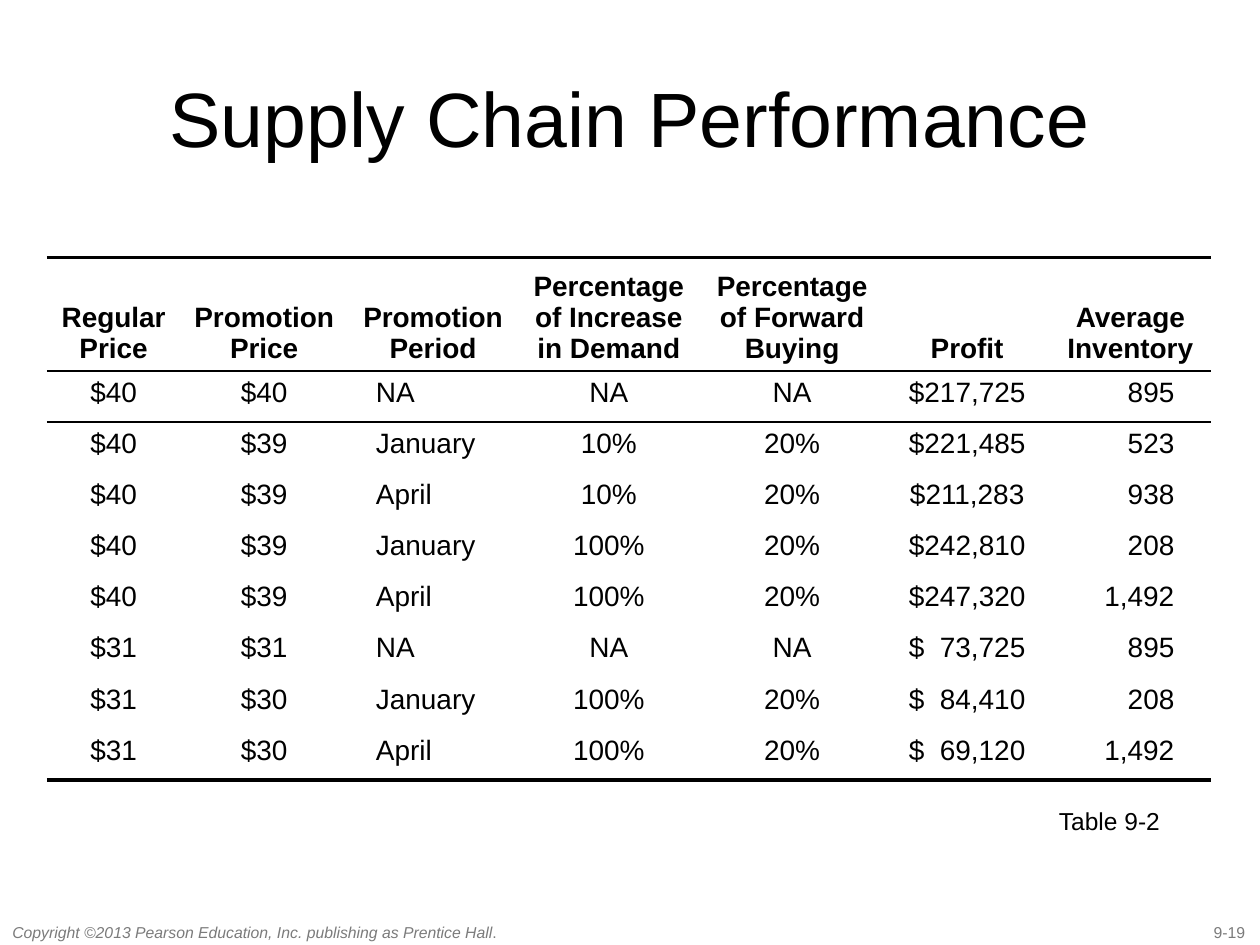
from lxml import etree
from pptx import Presentation
from pptx import util as u
from pptx.dml import color
from pptx.enum import text
from pptx.oxml import ns

Pt = u.Pt
LEFT, MID, RIGHT = text.PP_ALIGN.LEFT, text.PP_ALIGN.CENTER, text.PP_ALIGN.RIGHT
PLAIN = "{2D5ABB26-0587-4C30-8999-92F81FD0307C}"  # table style without grid

HEADS = ["Regular Price", "Promotion Price", "Promotion Period",
         "Percentage of Increase in Demand", "Percentage of Forward Buying",
         "Profit", "Average Inventory"]
ROWS = [
    ["$40", "$40", "NA", "NA", "NA", "$217,725", "895"],
    ["$40", "$39", "January", "10%", "20%", "$221,485", "523"],
    ["$40", "$39", "April", "10%", "20%", "$211,283", "938"],
    ["$40", "$39", "January", "100%", "20%", "$242,810", "208"],
    ["$40", "$39", "April", "100%", "20%", "$247,320", "1,492"],
    ["$31", "$31", "NA", "NA", "NA", "$  73,725", "895"],
    ["$31", "$30", "January", "100%", "20%", "$  84,410", "208"],
    ["$31", "$30", "April", "100%", "20%", "$  69,120", "1,492"],
]
WIDTHS = [76.3, 95.8, 97.2, 103.7, 105.8, 94.3, 92.2]
ALIGNS = [MID, MID, LEFT, MID, MID, MID, RIGHT]
PERIOD, STOCK = 2, 6  # columns with their own side margin


def rgb(code):
    return color.RGBColor.from_string(code)


class Deck:
    face, ink, gray = "Arial", "000000", "7B7B7B"

    def __init__(self):
        self.prs = Presentation()
        self.prs.slide_width, self.prs.slide_height = Pt(720), Pt(540)
        self.slide = self.prs.slides.add_slide(self.prs.slide_layouts[5])

    def style(self, para, size, hue=None, align=LEFT, bold=False, slant=False):
        para.alignment = align
        font = para.font
        font.name, font.size = self.face, Pt(size)
        font.bold, font.italic = bold, slant
        font.color.rgb = rgb(hue or self.ink)

    def title(self, words, x, y, w, h):
        head = self.slide.shapes.title
        head.left, head.top, head.width, head.height = map(Pt, (x, y, w, h))
        frame = head.text_frame
        frame.text = words
        frame.vertical_anchor = text.MSO_ANCHOR.MIDDLE
        self.style(frame.paragraphs[0], 44, align=MID)

    def label(self, words, x, y, w, h, size, hue=None, slant=False):
        box = self.slide.shapes.add_textbox(*map(Pt, (x, y, w, h)))
        frame = box.text_frame
        frame.word_wrap = False
        frame.text = words
        self.style(frame.paragraphs[0], size, hue, slant=slant)
        return frame.paragraphs[0]

    def border(self, cell, side, width):
        line = etree.SubElement(cell._tc.get_or_add_tcPr(), ns.qn("a:ln" + side),
                                w=str(int(Pt(width))))
        fill = etree.SubElement(line, ns.qn("a:solidFill"))
        etree.SubElement(fill, ns.qn("a:srgbClr"), val=self.ink)

    def table(self, heads, rows, x, y, widths, high, step):
        data = [heads] + rows
        last = len(rows)
        frame = self.slide.shapes.add_table(
            len(data), len(heads), Pt(x), Pt(y), Pt(sum(widths)), Pt(high))
        grid = frame.table
        grid.first_row = grid.horz_banding = False
        grid._tbl.tblPr.find(ns.qn("a:tableStyleId")).text = PLAIN
        for col, width in zip(grid.columns, widths):
            col.width = Pt(width)
        # Rules around the heads and below the last row
        rules = {0: [("T", 2.25), ("B", 1.5)],
                 1: [("T", 1.5)],
                 last: [("B", 2.25)]}
        for r, row in enumerate(data):
            grid.rows[r].height = Pt(step)  # the head row grows to fit
            for c, words in enumerate(row):
                cell = grid.cell(r, c)
                cell.text = words
                for side, width in rules.get(r, []):
                    self.border(cell, side, width)
                cell.fill.background()
                align = ALIGNS[c] if r else MID
                self.style(cell.text_frame.paragraphs[0], 16,
                           align=align, bold=r == 0)
                if r == 0:
                    cell.vertical_anchor = text.MSO_ANCHOR.BOTTOM
                elif c == PERIOD:
                    cell.margin_left = Pt(16)
                elif c == STOCK:
                    cell.margin_right = Pt(21)
        frame.height = Pt(high)


def main():
    deck = Deck()

    # Footer
    deck.label("9-19", 686.4, 523.8, 33.6, 18, 9, deck.gray)
    note = deck.label("Copyright ©2013 Pearson Education, Inc. publishing as "
                      "Prentice Hall", 0, 523.8, 291, 18, 9, deck.gray, True)
    stop = note.add_run()
    stop.text = "."
    stop.font.italic = False

    # Title, table and its number
    deck.title("Supply Chain Performance", 36, 21.6, 648, 90)
    deck.table(HEADS, ROWS, 26.8, 147, WIDTHS, 298, 29.25)
    deck.label("Table 9-2", 598, 457.2, 72.7, 24.5, 14)

    deck.prs.save("out.pptx")


if __name__ == "__main__":
    main()
